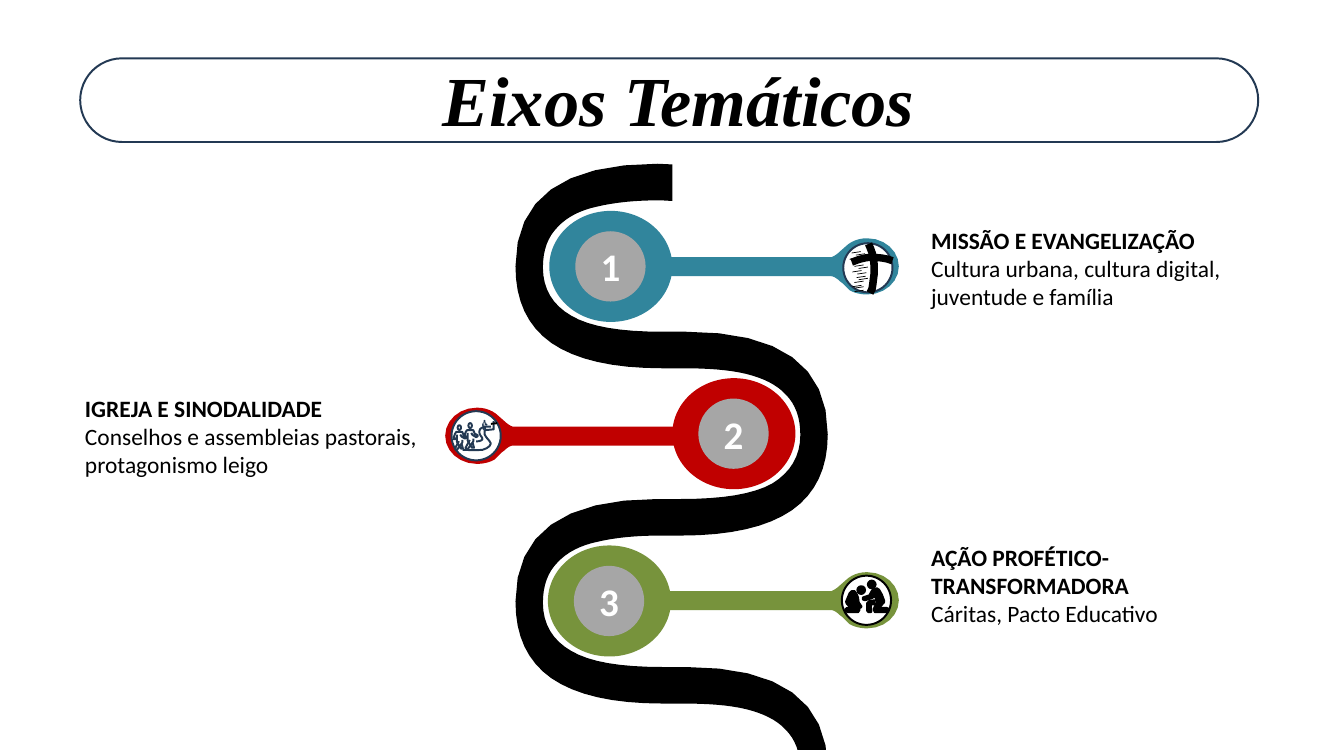
import pptx
import pptx.dml.color
import pptx.enum.shapes
import pptx.enum.text
import pptx.util
from lxml import etree

# The grid has square cells of one inch: 19.11 columns by 10.67 rows.
CELL = pptx.util.Inches(1)
COLUMNS, ROWS = 19.11, 10.67
SHAPES = pptx.enum.shapes.MSO_SHAPE
COLORS = {"black": "000000", "white": "FFFFFF", "gray": "A6A6A6", "navy": "233953",
          "blue": "31859C", "red": "C00000", "green": "77933C"}

# In every path a pair is a straight step and six numbers are a Bézier curve.
ROAD_PERIOD = 4.77
ROAD_DOWN = [
    (9.39, 2.85), (9.04, 2.85, 8.74, 2.88, 8.49, 2.94), (8.25, 2.99, 8.06, 3.09, 7.93, 3.23),
    (7.79, 3.37, 7.72, 3.56, 7.72, 3.81), (7.72, 4.11, 7.86, 4.34, 8.12, 4.49),
    (8.39, 4.65, 8.82, 4.72, 9.42, 4.72), (9.75, 4.72), (11.1, 4.72, 11.77, 5.2, 11.77, 6.18),
    (11.77, 6.66, 11.6, 7.02, 11.26, 7.26), (10.91, 7.5, 10.39, 7.62, 9.68, 7.62)]
ROAD_UP = [
    (9.68, 7.1), (10.28, 7.1, 10.71, 7.03, 10.98, 6.88), (11.24, 6.72, 11.38, 6.49, 11.38, 6.19),
    (11.38, 5.94, 11.31, 5.75, 11.17, 5.61), (11.04, 5.47, 10.85, 5.38, 10.61, 5.32),
    (10.36, 5.26, 10.06, 5.24, 9.71, 5.24), (9.42, 5.24), (8.71, 5.24, 8.19, 5.12, 7.84, 4.88),
    (7.5, 4.64, 7.33, 4.28, 7.33, 3.79), (7.33, 2.82, 8, 2.33, 9.35, 2.33)]
PIN = [
    (0, -0.4), (0.25, -0.4, 0.45, -0.22, 0.45, 0), (0.45, 0.22, 0.25, 0.4, 0, 0.4),
    (-0.09, 0.4, -0.18, 0.38, -0.25, 0.34), (-0.35, 0.24), (-0.39, 0.21),
    (-0.43, 0.17, -0.48, 0.14, -0.51, 0.14), (-2.94, 0.14), (-2.94, -0.13), (-0.51, -0.13),
    (-0.48, -0.14, -0.43, -0.17, -0.39, -0.21), (-0.31, -0.28), (-0.23, -0.36, -0.12, -0.4, 0, -0.4)]
WALKER = [
    [(0.05, 0.14), (0.05, 0.25), (0.11, 0.35), (0.14, 0.35), (0.12, 0.28)],
    [(0.08, 0.24), (0.02, 0.35), (0.03, 0.37), (0.05, 0.37), (0.13, 0.26), (0.13, 0.22)],
    [(0.1, 0.14), (0.12, 0.17), (0.17, 0.2), (0.19, 0.19), (0.19, 0.17), (0.15, 0.15),
     (0.13, 0.1), (0.04, 0.1), (0.02, 0.13), (0, 0.19), (0, 0.21), (0.02, 0.21), (0.04, 0.19)]]
WINDING_TRAIL = [
    [(6.77, 6.28), (6.81, 6.28, 6.85, 6.27, 6.86, 6.25), (6.87, 6.23, 6.82, 6.19, 6.82, 6.17),
     (6.81, 6.14, 6.82, 6.12, 6.83, 6.1), (6.88, 6.07), (6.98, 6.07)],
    [(6.58, 6.4), (6.63, 6.4, 6.8, 6.41, 6.86, 6.4), (6.93, 6.38, 6.97, 6.35, 6.98, 6.31),
     (6.98, 6.28, 6.9, 6.22, 6.89, 6.18), (6.89, 6.12), (7, 6.11), (7.02, 6.11), (7.02, 5.99)]]
CROSS_BEAMS = [
    (7.75, [(12.35, 3.47), (12.38, 3.54, 12.41, 3.61, 12.42, 3.68),
            (12.43, 3.75, 12.43, 3.81, 12.43, 3.89), (12.42, 3.96, 12.41, 4.06, 12.4, 4.11),
            (12.37, 4.17)]),
    (7.5, [(12.11, 3.73), (12.23, 3.68, 12.32, 3.66, 12.41, 3.66),
           (12.57, 3.67, 12.61, 3.68, 12.69, 3.71)])]
HATCH_STARTS = [(12.3, 3.61), (12.24, 3.58), (12.21, 3.67), (12.34, 3.8), (12.28, 3.77),
                (12.25, 3.85), (12.32, 3.88), (12.31, 3.93), (12.34, 3.96), (12.28, 4),
                (12.25, 4.06), (12.28, 4.08), (12.28, 4.13)]
HELPERS = [
    [(12.5, 8.39), (12.54, 8.46), (12.57, 8.54), (12.57, 8.57), (12.5, 8.65), (12.61, 8.65),
     (12.63, 8.66), (12.63, 8.69), (12.61, 8.71), (12.44, 8.71), (12.42, 8.67), (12.47, 8.56),
     (12.44, 8.48), (12.4, 8.51), (12.3, 8.54), (12.27, 8.53), (12.27, 8.5), (12.36, 8.47),
     (12.4, 8.4), (12.43, 8.38), (12.47, 8.37)],
    [(12.44, 8.54), (12.36, 8.55), (12.33, 8.58), (12.33, 8.69), (12.35, 8.71),
     (12.38, 8.71), (12.39, 8.7), (12.38, 8.6), (12.43, 8.6)],
    [(12.12, 8.56), (12.17, 8.6), (12.22, 8.66), (12.22, 8.68), (12.2, 8.71), (12.05, 8.71),
     (12.02, 8.69), (12.02, 8.67), (12.04, 8.65), (12.13, 8.65), (12.07, 8.62), (12.04, 8.59),
     (12.03, 8.56), (12.05, 8.51), (12.08, 8.44), (12.11, 8.41), (12.15, 8.41), (12.18, 8.45),
     (12.2, 8.5), (12.21, 8.57), (12.25, 8.63), (12.23, 8.65), (12.15, 8.57), (12.13, 8.52)]]

# number, color, ring column, pin center, pin direction, text place, heading, detail
AXES = [
    ("1", "blue", 7.81, (12.33, 3.79), 1, (13.14, 3.17), "MISSÃO E EVANGELIZAÇÃO",
     "Cultura urbana, cultura digital, juventude e família"),
    ("2", "red", 9.56, (6.78, 6.2), -1, (1.11, 5.55), "IGREJA E SINODALIDADE",
     "Conselhos e assembleias pastorais, protagonismo leigo"),
    ("3", "green", 7.79, (12.33, 8.54), 1, (13.14, 7.68), "AÇÃO PROFÉTICO-TRANSFORMADORA",
     "Cáritas, Pacto Educativo")]


def grid(*cells):
    return [round(cell * CELL) for cell in cells]


def rgb(name):
    return pptx.dml.color.RGBColor.from_string(COLORS[name])


def set_all(target, **values):
    for name, value in values.items():
        setattr(target, name, value)


def place(path, column, row, across=1, down=1):
    """Scale a path and move it to a grid position."""
    return [tuple(value * (down if i % 2 else across) + (row if i % 2 else column)
                  for i, value in enumerate(step)) for step in path]


def flatten(path, pieces):
    """Turn straight steps and curves into a list of points."""
    points = [path[0]]
    for step in path[1:]:
        if len(step) == 2:
            points.append(step)
            continue
        corners = [points[-1], step[:2], step[2:4], step[4:]]
        for piece in range(1, pieces + 1):
            t = piece / pieces
            weights = ((1 - t) ** 3, 3 * t * (1 - t) ** 2, 3 * t * t * (1 - t), t ** 3)
            points.append(tuple(sum(w * c[i] for w, c in zip(weights, corners)) for i in (0, 1)))
    return points


def paint(shape, fill, line, width):
    shape.shadow.inherit = False
    for part, color in ((shape.fill, fill), (shape.line.fill, line)):
        if color:
            part.solid()
            part.fore_color.rgb = rgb(color)
        else:
            part.background()
    if line:
        shape.line.width = pptx.util.Pt(width)
    return shape


def add_outline(page, paths, fill=None, line=None, width=2, pieces=3):
    """Draw paths as one shape; a filled shape has closed paths."""
    outlines = [[grid(*point) for point in flatten(path, pieces)] for path in paths]
    builder = page.shapes.build_freeform(*outlines[0][0])
    for i, points in enumerate(outlines):
        if i:
            builder.move_to(*points[0])
        builder.add_line_segments(points[1:], close=bool(fill))
    return paint(builder.convert_to_shape(), fill, line, width)


def add_preset(page, area, fill=None, line=None, width=2, kind=SHAPES.OVAL):
    return paint(page.shapes.add_shape(kind, *grid(*area)), fill, line, width)


def add_stroke(page, start, end, color, width):
    stroke = page.shapes.add_connector(pptx.enum.shapes.MSO_CONNECTOR.STRAIGHT,
                                       *grid(*start, *end))
    stroke.line.color.rgb = rgb(color)
    stroke.line.width = pptx.util.Pt(width)
    etree.SubElement(stroke._element.spPr, pptx.oxml.ns.qn("a:effectLst"))


def write(para, text, size, color="black", font="Calibri", align=None, **style):
    span = para.add_run()
    span.text = text
    para.alignment = align
    set_all(span.font, name=font, size=pptx.util.Pt(size), **style)
    span.font.color.rgb = rgb(color)


def add_text(page, area):
    frame = page.shapes.add_textbox(*grid(*area)).text_frame
    frame.word_wrap = True
    return frame


def add_axis(page, row, number, color, column, center, direction, corner, heading, detail):
    add_outline(page, [place(PIN, *center, direction)], color, pieces=6)
    add_preset(page, (column, row, 1.75, 1.58), color)
    frame = add_preset(page, (column + 0.37, row + 0.29, 1, 1), "gray").text_frame
    set_all(frame, margin_left=0, margin_right=0, margin_top=0, margin_bottom=0,
            vertical_anchor=pptx.enum.text.MSO_ANCHOR.MIDDLE)
    write(frame.paragraphs[0], number, 40, "white",
          align=pptx.enum.text.PP_ALIGN.CENTER, bold=True)
    frame = add_text(page, (*corner, 4.92, 1.31))
    frame.auto_size = pptx.enum.text.MSO_AUTO_SIZE.SHAPE_TO_FIT_TEXT
    write(frame.paragraphs[0], heading, 24, bold=True)
    write(frame.add_paragraph(), detail, 24, bold=False)


def add_walker(page, column, row, scale, width):
    add_outline(page, [place(path, column, row, scale, scale) for path in WALKER],
                None, "navy", width)
    add_preset(page, (column + 0.06 * scale, row, 0.05 * scale, 0.07 * scale),
               "white", "navy", width)


def add_cross_icon(page):
    add_preset(page, (11.99, 3.46, 0.7, 0.7), "white", "navy")
    hatch = [[(column, row), (column - 0.13, row + 0.02)] for column, row in HATCH_STARTS]
    add_outline(page, hatch, None, "black", 0.75)
    for width, path in CROSS_BEAMS:
        add_outline(page, [path], None, "black", width)


def add_helpers_icon(page):
    add_preset(page, (11.97, 8.19, 0.7, 0.7), "white", "black")
    add_outline(page, HELPERS, "black", "black")
    for column, row in ((12.34, 8.26), (12.19, 8.34)):
        add_preset(page, (column, row, 0.11, 0.11), "black", "black")


def add_walkers_icon(page):
    add_preset(page, (6.42, 5.85, 0.7, 0.7), "white", "navy")
    add_outline(page, WINDING_TRAIL, None, "navy")
    add_stroke(page, (6.98, 6.03), (7.07, 6.02), "black", 2)
    for walker in ((6.6, 6.02, 1, 2), (6.45, 6.05, 0.95, 2), (6.86, 5.98, 0.35, 0.75)):
        add_walker(page, *walker)


def add_title(page, text):
    banner = add_preset(page, (1.14, 0.83, 16.75, 1.19), None, "navy",
                        kind=SHAPES.ROUNDED_RECTANGLE)
    banner.adjustments[0] = 0.5
    frame = add_text(page, (1.14, 0.75, 17.02, 1.21))
    write(frame.paragraphs[0], text, 72, font="Times New Roman",
          align=pptx.enum.text.PP_ALIGN.CENTER, bold=True, italic=True)


def main():
    deck = pptx.Presentation()
    deck.slide_width, deck.slide_height = grid(COLUMNS, ROWS)
    page = deck.slides.add_slide(deck.slide_layouts[6])
    road = ([(9.56, 2.34), (9.56, 2.86)] + ROAD_DOWN + place(ROAD_DOWN, 0, ROAD_PERIOD)
            + place(ROAD_UP, 0, ROAD_PERIOD) + ROAD_UP)
    add_outline(page, [road], "black", pieces=8)
    for i, axis in enumerate(AXES):
        add_axis(page, 3 + 2.38 * i, *axis)
    add_cross_icon(page)
    add_helpers_icon(page)
    add_walkers_icon(page)
    add_title(page, "Eixos Temáticos")
    deck.save("out.pptx")


if __name__ == "__main__":
    main()
